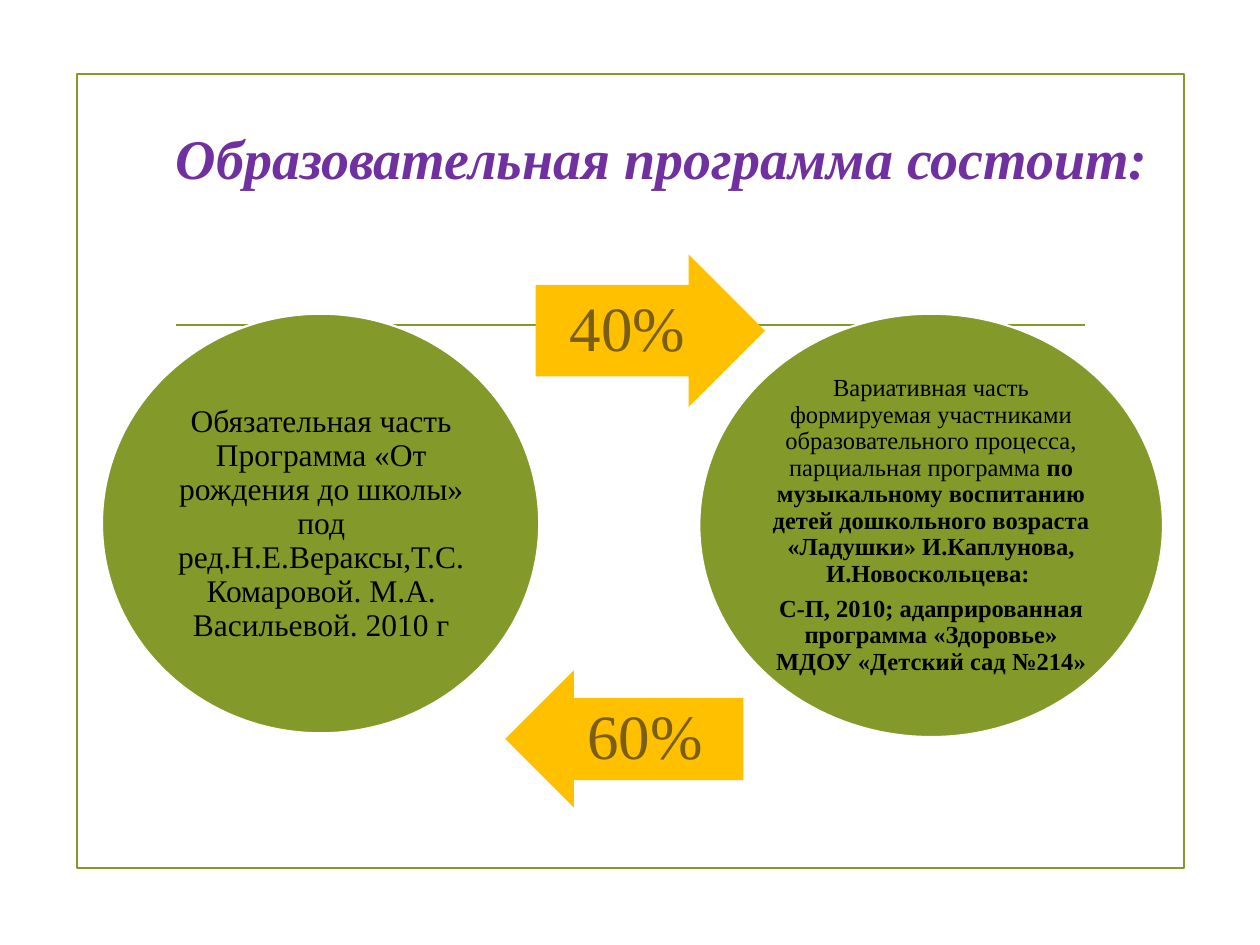
from dataclasses import dataclass

from lxml import etree
from pptx import Presentation
from pptx import util as u
from pptx.dml.color import RGBColor
from pptx.enum import shapes, text
from pptx.oxml.ns import qn

COLUMNS, ROWS = 100, 75


@dataclass(frozen=True)
class Theme:
    font: str = "Times New Roman"
    green: str = "83992A"
    amber: str = "FFC000"
    brown: str = "7A5E15"
    purple: str = "7030A0"
    black: str = "000000"
    white: str = "FFFFFF"
    title_size: int = 32
    share_size: int = 36
    large_size: int = 18
    small_size: int = 14
    line_width: float = 1.25


@dataclass(frozen=True)
class Area:
    column: float
    row: float
    columns: float
    rows: float


@dataclass(frozen=True)
class Span:
    words: str
    bold: bool = False


@dataclass(frozen=True)
class Part:
    circle: Area
    label: Area
    size: int
    paragraphs: tuple


@dataclass(frozen=True)
class Share:
    arrow: Area
    label: Area
    words: str
    rotation: int = 0


THEME = Theme()
FRAME = Area(6.1, 5.9, 87.9, 63)
TITLE = Area(11, 7.4, 83.1, 10.1)
RULE = Area(14, 25.8, 72.1, 0)

PARTS = (
    Part(Area(8.1, 24.9, 34.7, 33.3), Area(13.2, 29.8, 24.6, 23.6), THEME.large_size, (
        (Span("Обязательная часть Программа «От рождения до школы» под "
              "ред.Н.Е.Вераксы,Т.С. Комаровой. М.А. Васильевой. 2010 г"),),
    )),
    Part(Area(55.5, 24.9, 36.8, 33.6), Area(60.9, 29.8, 26, 23.8), THEME.small_size, (
        (Span("Вариативная часть формируемая участниками образовательного "
              "процесса, парциальная программа "),
         Span("по музыкальному воспитанию детей дошкольного возраста "
              "«Ладушки» И.Каплунова, И.Новоскольцева: ", bold=True)),
        (Span("С-П, 2010; адапрированная программа «Здоровье» "
              "МДОУ «Детский сад №214»", bold=True),),
    )),
)

SHARES = (
    Share(Area(42.5, 20.2, 18.2, 12.1), Area(42.5, 22.6, 14.6, 7.3), "40%"),
    Share(Area(40.1, 53.2, 18.9, 10.9), Area(43.4, 55.4, 15.6, 6.5), "60%", 180),
)

deck = Presentation()
deck.slide_width, deck.slide_height = u.Inches(10), u.Inches(7.5)


def place(area: Area) -> tuple:
    column, row = deck.slide_width / COLUMNS, deck.slide_height / ROWS
    return (round(area.column * column), round(area.row * row),
            round(area.columns * column), round(area.rows * row))


def color(value: str) -> RGBColor:
    return RGBColor.from_string(value)


def add_figure(page, kind, area: Area, fill: str = "", line: str = ""):
    figure = page.shapes.add_shape(kind, *place(area))
    figure.shadow.inherit = False
    if fill:
        figure.fill.solid()
        figure.fill.fore_color.rgb = color(fill)
    else:
        figure.fill.background()
    if line:
        figure.line.color.rgb = color(line)
        figure.line.width = u.Pt(THEME.line_width)
    else:
        figure.line.fill.background()
    return figure


def add_rule(page, area: Area) -> None:
    left, top, width, height = place(area)
    rule = page.shapes.add_connector(
        shapes.MSO_CONNECTOR.STRAIGHT, left, top, left + width, top + height)
    rule.line.color.rgb = color(THEME.green)
    rule.line.width = u.Pt(THEME.line_width)
    etree.SubElement(rule._element.spPr, qn("a:effectLst"))


def write(frame, paragraphs: tuple, *, size: int, tint: str, italic: bool = False,
          spacing: float = 1.0, after: float = 0) -> None:
    frame.word_wrap = True
    frame.auto_size = text.MSO_AUTO_SIZE.NONE
    frame.vertical_anchor = text.MSO_ANCHOR.MIDDLE
    for index, spans in enumerate(paragraphs):
        para = frame.add_paragraph() if index else frame.paragraphs[0]
        para.alignment = text.PP_ALIGN.CENTER
        para.line_spacing = spacing
        para.space_before = u.Pt(0)
        para.space_after = u.Pt(after)
        for part in spans:
            span = para.add_run()
            span.text = part.words
            span.font.name = THEME.font
            span.font.size = u.Pt(size)
            span.font.bold = part.bold
            span.font.italic = italic
            span.font.color.rgb = color(tint)


def add_label(page, area: Area, paragraphs: tuple, *, size: int, tint: str,
              inset: float = 0) -> None:
    box = page.shapes.add_textbox(*place(area))
    frame = box.text_frame
    frame.margin_left = frame.margin_right = u.Inches(inset)
    frame.margin_top = frame.margin_bottom = u.Inches(inset)
    write(frame, paragraphs, size=size, tint=tint, spacing=0.9, after=round(size * 0.35, 1))


def add_part(page, part: Part) -> None:
    add_figure(page, shapes.MSO_SHAPE.OVAL, part.circle, THEME.green, THEME.white)
    add_label(page, part.label, part.paragraphs, size=part.size, tint=THEME.black, inset=0.02)


def add_share(page, share: Share) -> None:
    arrow = add_figure(page, shapes.MSO_SHAPE.RIGHT_ARROW, share.arrow, THEME.amber)
    arrow.adjustments[0], arrow.adjustments[1] = 0.6, 0.5
    arrow.rotation = share.rotation
    add_label(page, share.label, ((Span(share.words),),),
              size=THEME.share_size, tint=THEME.brown)


def main() -> None:
    page = deck.slides.add_slide(deck.slide_layouts[5])
    add_figure(page, shapes.MSO_SHAPE.RECTANGLE, FRAME, line=THEME.green)
    add_rule(page, RULE)
    title = page.shapes.title
    title.left, title.top, title.width, title.height = place(TITLE)
    write(title.text_frame, ((Span("Образовательная программа состоит:", bold=True),),),
          size=THEME.title_size, tint=THEME.purple, italic=True)
    for part, share in zip(PARTS, SHARES):
        add_part(page, part)
        add_share(page, share)
    deck.save("out.pptx")


if __name__ == "__main__":
    main()
